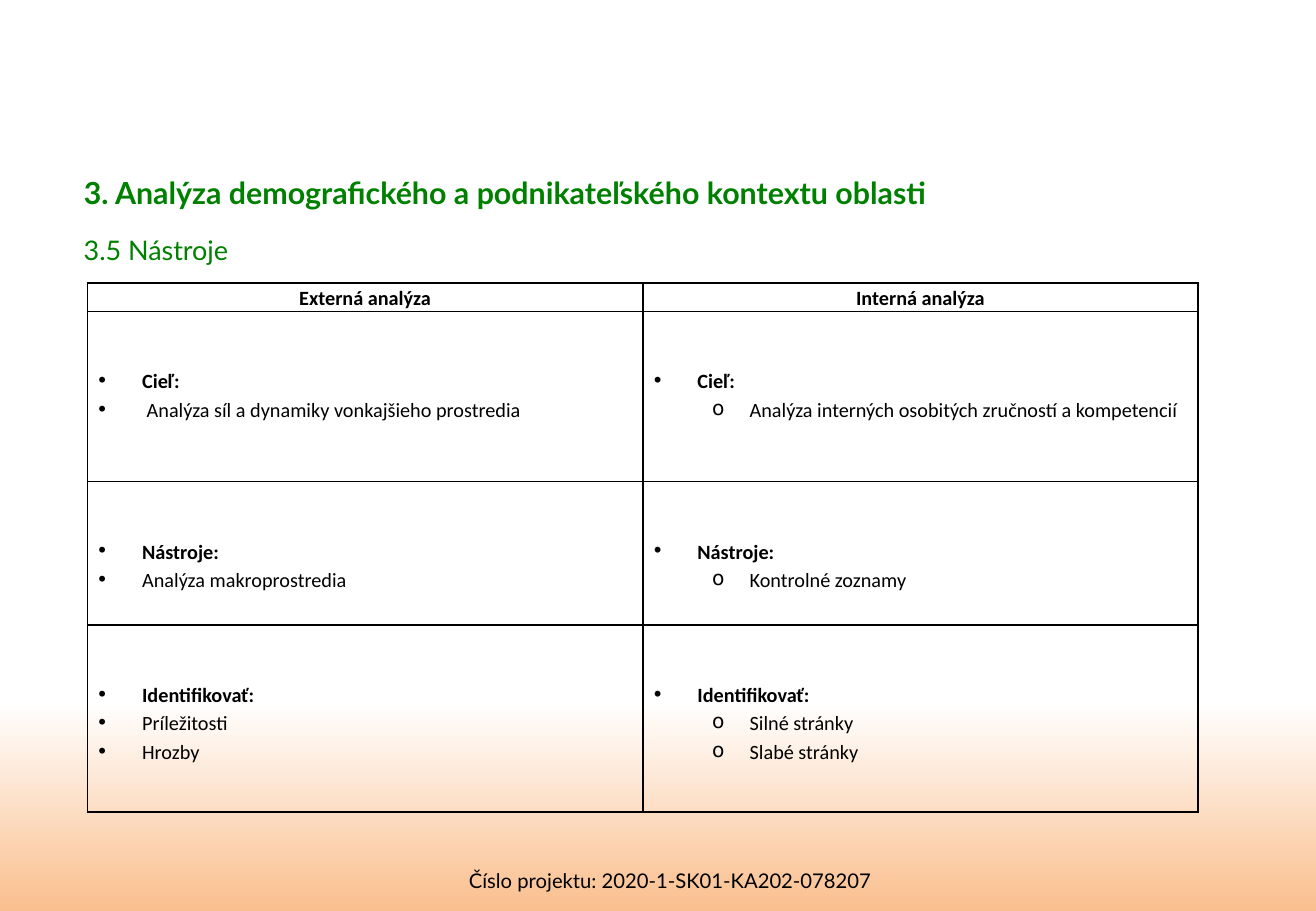
from dataclasses import dataclass

from lxml import etree
from pptx import Presentation
from pptx.dml.color import RGBColor
from pptx.enum import text as t
from pptx.oxml import ns
from pptx.util import Inches, Pt

BLACK = RGBColor(0x00, 0x00, 0x00)
WHITE = RGBColor(0xFF, 0xFF, 0xFF)
GREEN = RGBColor(0x00, 0x80, 0x00)
PEACH = RGBColor(0xFA, 0xBF, 0x8E)
HEADING_FONT = "Lato"
TABLE_FONT = "Calibri"


@dataclass(frozen=True)
class Bullet:
    char: str
    level: int
    left: float
    hanging: float


@dataclass(frozen=True)
class Topic:
    label: str
    height: float
    external: tuple[str, ...]
    internal: tuple[str, ...]


DOT = Bullet("∙", 0, 0.38, 0.38)
CIRCLE = Bullet("o", 1, 0.81, 0.31)
HEADERS = ("Externá analýza", "Interná analýza")
HEADER_HEIGHT = 0.23
COLUMN_WIDTH = 4.57
TOPICS = (
    Topic("Cieľ:", 1.4, (" Analýza síl a dynamiky vonkajšieho prostredia",),
          ("Analýza interných osobitých zručností a kompetencií",)),
    Topic("Nástroje:", 1.18, ("Analýza makroprostredia",), ("Kontrolné zoznamy",)),
    Topic("Identifikovať:", 1.54, ("Príležitosti", "Hrozby"),
          ("Silné stránky", "Slabé stránky")),
)


def add_run(paragraph, content: str, size: float, font: str,
            color: RGBColor = BLACK, bold: bool = False) -> None:
    run = paragraph.add_run()
    run.text = content
    run.font.size = Pt(size)
    run.font.name = font
    run.font.bold = bold
    run.font.color.rgb = color


def write_line(shape, content: str, size: float, color: RGBColor,
               bold: bool = False, align=t.PP_ALIGN.LEFT) -> None:
    """Fill a title or text box with one line set from the top."""
    frame = shape.text_frame
    frame.word_wrap = True
    frame.auto_size = t.MSO_AUTO_SIZE.NONE
    frame.vertical_anchor = t.MSO_ANCHOR.TOP
    paragraph = frame.paragraphs[0]
    paragraph.alignment = align
    add_run(paragraph, content, size, HEADING_FONT, color, bold)


def add_bullet(paragraph, bullet: Bullet) -> None:
    paragraph.level = bullet.level
    properties = paragraph._p.get_or_add_pPr()
    properties.set("marL", str(Inches(bullet.left)))
    properties.set("indent", str(-Inches(bullet.hanging)))
    color = etree.SubElement(properties, ns.qn("a:buClr"))
    etree.SubElement(color, ns.qn("a:srgbClr"), val=str(BLACK))
    etree.SubElement(properties, ns.qn("a:buChar"), char=bullet.char)


def format_cell(cell, top: float = 0) -> None:
    """Give a cell its margins, thin black borders and no fill."""
    cell.margin_left = cell.margin_right = Inches(0.07)
    cell.margin_top, cell.margin_bottom = Inches(top), 0
    properties = cell._tc.get_or_add_tcPr()
    for side in ("lnL", "lnR", "lnT", "lnB"):
        line = etree.SubElement(properties, ns.qn(f"a:{side}"), w=str(Pt(1)))
        fill = etree.SubElement(line, ns.qn("a:solidFill"))
        etree.SubElement(fill, ns.qn("a:srgbClr"), val=str(BLACK))
    cell.fill.background()


def write_topic(cell, label: str, items: tuple[str, ...], item_bullet: Bullet) -> None:
    format_cell(cell, top=0.45)
    frame = cell.text_frame
    for index, content in enumerate((label, *items)):
        paragraph = frame.add_paragraph() if index else frame.paragraphs[0]
        add_bullet(paragraph, item_bullet if index else DOT)
        paragraph.line_spacing = 1.15
        add_run(paragraph, content, 12, TABLE_FONT, bold=index == 0)


def add_analysis_table(slide) -> None:
    heights = (HEADER_HEIGHT, *(topic.height for topic in TOPICS))
    table = slide.shapes.add_table(
        len(heights), len(HEADERS), Inches(0.72), Inches(2.33),
        Inches(COLUMN_WIDTH * len(HEADERS)), Inches(sum(heights))).table
    table.first_row = table.horz_banding = False
    for row, height in zip(table.rows, heights):
        row.height = Inches(height)
    for column, header in enumerate(HEADERS):
        table.columns[column].width = Inches(COLUMN_WIDTH)
        cell = table.cell(0, column)
        format_cell(cell)
        paragraph = cell.text_frame.paragraphs[0]
        paragraph.alignment = t.PP_ALIGN.CENTER
        paragraph.line_spacing = 1.15
        add_run(paragraph, header, 12, TABLE_FONT, bold=True)
    for row, topic in enumerate(TOPICS, start=1):
        write_topic(table.cell(row, 0), topic.label, topic.external, DOT)
        write_topic(table.cell(row, 1), topic.label, topic.internal, CIRCLE)


def set_background(slide) -> None:
    fill = slide.background.fill
    fill.gradient()
    fill.gradient_angle = 270
    for stop, position, color in zip(fill.gradient_stops, (0.77, 1), (WHITE, PEACH)):
        stop.position = position
        stop.color.rgb = color


def main() -> None:
    presentation = Presentation()
    presentation.slide_width = Inches(10.83)
    presentation.slide_height = Inches(7.5)
    slide = presentation.slides.add_slide(presentation.slide_layouts[5])
    set_background(slide)

    title = slide.shapes.title
    title.left, title.top = Inches(0.59), Inches(1.38)
    title.width, title.height = Inches(9.65), Inches(0.39)
    write_line(title, "3. Analýza demografického a podnikateľského kontextu oblasti",
               18, GREEN, bold=True)

    subtitle = slide.shapes.add_textbox(
        Inches(0.59), Inches(1.87), Inches(9.65), Inches(0.39))
    write_line(subtitle, "3.5 Nástroje", 16, GREEN)
    add_analysis_table(slide)

    footer = slide.shapes.add_textbox(
        Inches(3.74), Inches(7.1), Inches(3.55), Inches(0.3))
    write_line(footer, "Číslo projektu: 2020-1-SK01-KA202-078207", 12, BLACK,
               align=t.PP_ALIGN.CENTER)
    presentation.save("out.pptx")


if __name__ == "__main__":
    main()
